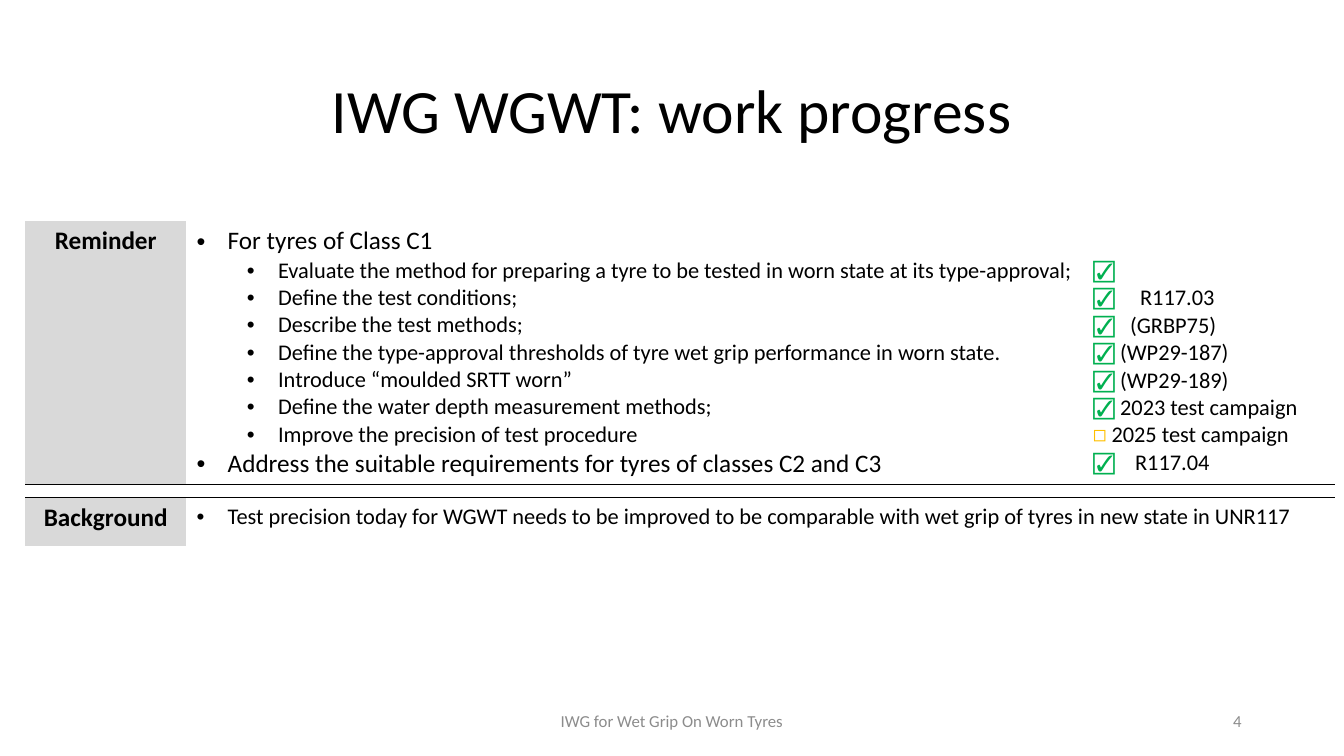
from lxml import etree
from pptx import Presentation
from pptx.dml.color import RGBColor
from pptx.enum.text import MSO_ANCHOR, PP_ALIGN
from pptx.oxml.ns import qn
from pptx.util import Inches, Pt

LEFT, MID, RIGHT = PP_ALIGN.LEFT, PP_ALIGN.CENTER, PP_ALIGN.RIGHT
CENTRE = MSO_ANCHOR.MIDDLE
FONT = "Calibri"
COLORS = {"ink": "000000", "grey": "8C8C8C", "band": "D9D9D9",
          "done": "00B050", "open": "FFC000"}
NO_STYLE = "{2D5ABB26-0587-4C30-8999-92F81FD0307C}"

# The slide is a grid of 160 columns by 90 rows.
UNIT = 1 / 12
COLS, ROWS = 160, 90
WIDTHS = [19.2, 106.7, 30]
HEIGHTS = [31.3, 1.6, 5.7]

TASKS = [
    (0, "For tyres of Class C1"),
    (1, "Evaluate the method for preparing a tyre to be tested in worn "
        "state at its type-approval;"),
    (1, "Define the test conditions;"),
    (1, "Describe the test methods;"),
    (1, "Define the type-approval thresholds of tyre wet grip performance "
        "in worn state."),
    (1, "Introduce “moulded SRTT worn”"),
    (1, "Define the water depth measurement methods;"),
    (1, "Improve the precision of test procedure"),
    (0, "Address the suitable requirements for tyres of classes C2 and C3"),
]
# Mark, colour, note, and tab stop of the note in inches
STATES = [
    ("☑", "done", "", None),
    ("☑", "done", "R117.03", 0.47),
    ("☑", "done", "(GRBP75)", 0.37),
    ("☑", "done", "(WP29-187)", None),
    ("☑", "done", "(WP29-189)", None),
    ("☑", "done", "2023 test campaign", None),
    ("◻", "open", "2025 test campaign", None),
    ("☑", "done", "R117.04", 0.42),
]
NEED = ("Test precision today for WGWT needs to be improved to be comparable "
        "with wet grip of tyres in new state in UNR117")


def grid(*cells):
    return [Inches(n * UNIT) for n in cells]


def style(run, size, color="ink", bold=False):
    font = run.font
    font.name, font.size, font.bold = FONT, Pt(size), bold
    font.color.rgb = RGBColor.from_string(COLORS[color])


def write(para, text, size, color="ink", align=LEFT, bold=False):
    para.text = text
    para.alignment = align
    style(para.runs[0], size, color, bold)


def paras(frame, count):
    """Give the frame the wanted number of paragraphs."""
    for _ in range(count - 1):
        frame.add_paragraph()
    return frame.paragraphs


def bullet(para, level):
    para.level = level
    props = para._p.get_or_add_pPr()
    props.set("marL", str(Inches(0.31 + 0.5 * level)))
    props.set("indent", str(-Inches(0.31)))
    etree.SubElement(props, qn("a:buFont"), typeface="Arial")
    etree.SubElement(props, qn("a:buChar"), char="•")


def tab(para, pos):
    stops = etree.SubElement(para._p.get_or_add_pPr(), qn("a:tabLst"))
    etree.SubElement(stops, qn("a:tab"), pos=str(Inches(pos)), algn="l")


def rule(cell, side):
    """Draw a black line on one side of a cell."""
    line = etree.Element(qn("a:" + side), w=str(Pt(1)))
    fill = etree.SubElement(line, qn("a:solidFill"))
    etree.SubElement(fill, qn("a:srgbClr"), val=COLORS["ink"])
    cell._tc.get_or_add_tcPr().insert(0, line)


def label(cell, text):
    write(cell.text_frame.paragraphs[0], text, 18, align=MID, bold=True)
    cell.fill.solid()
    cell.fill.fore_color.rgb = RGBColor.from_string(COLORS["band"])


def points(cell, items, small=16, big=18):
    cell.margin_right = 0
    for para, (level, text) in zip(paras(cell.text_frame, len(items)), items):
        write(para, text, small if level else big)
        bullet(para, level)


def states(cell):
    cell.margin_right = 0
    cell.margin_top = Inches(0.36)  # level with the second task
    for para, state in zip(paras(cell.text_frame, len(STATES)), STATES):
        mark, color, note, stop = state
        write(para, mark, 16, color)
        if stop:
            tab(para, stop)
        if note:
            run = para.add_run()
            run.text = ("\t" if stop else " ") + note
            style(run, 16)


def thin(cell):
    """Let an empty cell shrink to the height of its row."""
    cell.margin_top = cell.margin_bottom = 0
    etree.SubElement(cell.text_frame.paragraphs[0]._p,
                     qn("a:endParaRPr"), sz="400")


def heading(slide, text):
    title = slide.shapes.title
    title.left, title.top, title.width, title.height = grid(11, 4.8, 138, 17.4)
    title.text_frame.vertical_anchor = CENTRE
    para = title.text_frame.paragraphs[0]
    write(para, text, 44, align=MID)
    para.line_spacing = 0.9


def foot(slide, text, col, span, align):
    box = slide.shapes.add_textbox(*grid(col, 83.4, span, 4.8))
    frame = box.text_frame
    frame.word_wrap = True
    frame.vertical_anchor = CENTRE
    write(frame.paragraphs[0], text, 12, "grey", align)


def progress(slide):
    frame = slide.shapes.add_table(
        3, 3, *grid(3, 26.3, sum(WIDTHS), sum(HEIGHTS)))
    table = frame.table
    table.first_row = table.horz_banding = False
    table._tbl.tblPr.find(qn("a:tableStyleId")).text = NO_STYLE
    for col, width in zip(table.columns, grid(*WIDTHS)):
        col.width = width
    for row, height in zip(table.rows, grid(*HEIGHTS)):
        row.height = height

    label(table.cell(0, 0), "Reminder")
    points(table.cell(0, 1), TASKS)
    states(table.cell(0, 2))
    label(table.cell(2, 0), "Background")
    need = table.cell(2, 1)
    need.merge(table.cell(2, 2))
    points(need, [(0, NEED)], big=16)
    for col in range(3):
        rule(table.cell(0, col), "lnB")
        rule(table.cell(1, col), "lnT")
        thin(table.cell(1, col))


def main():
    deck = Presentation()
    deck.slide_width, deck.slide_height = grid(COLS, ROWS)
    slide = deck.slides.add_slide(deck.slide_layouts[5])
    heading(slide, "IWG WGWT: work progress")
    progress(slide)
    foot(slide, "IWG for Wet Grip On Worn Tyres", 53, 54, MID)
    foot(slide, "4", 113, 36, RIGHT)
    deck.save("out.pptx")


if __name__ == "__main__":
    main()
